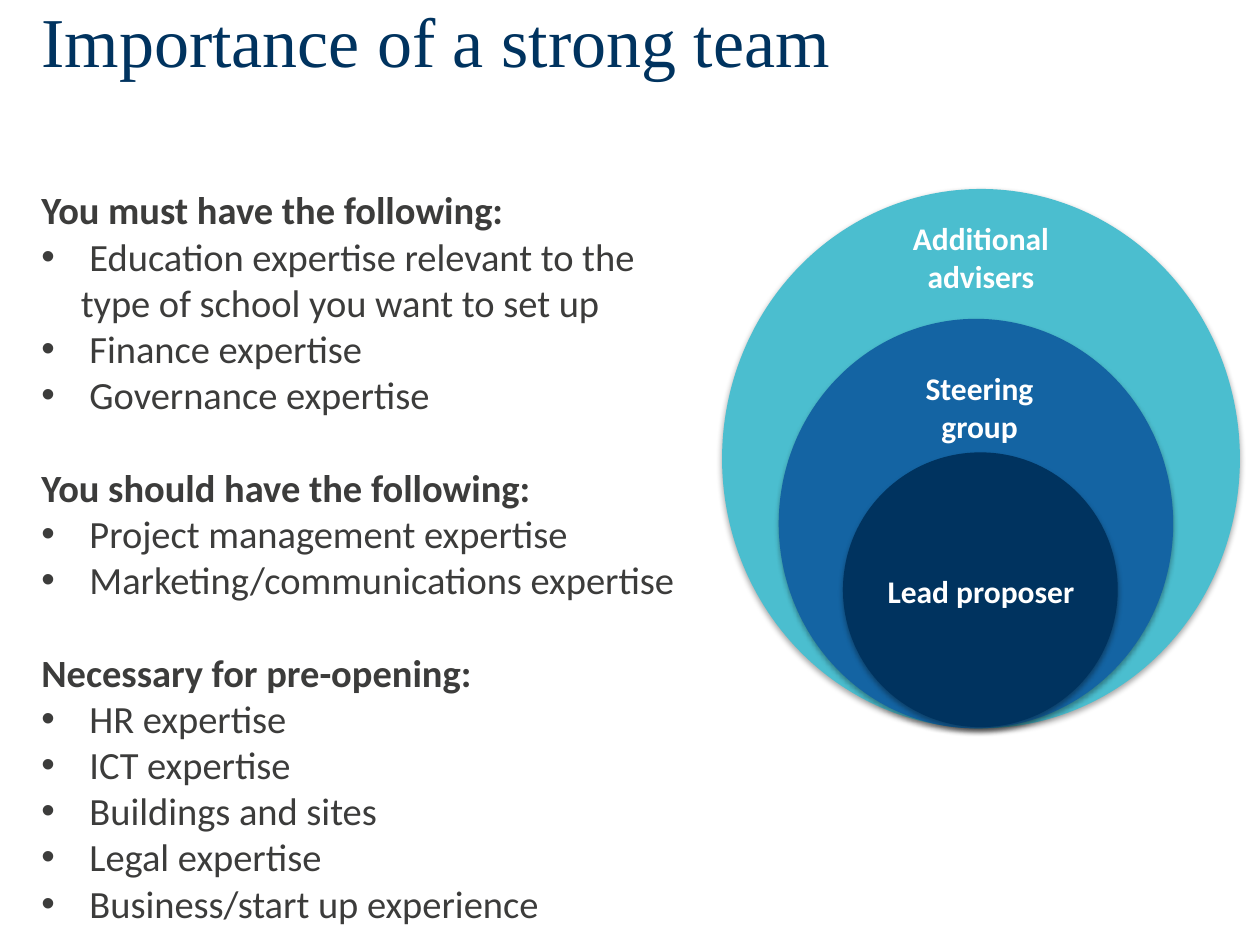
from lxml.etree import SubElement
from pptx import Presentation
from pptx.dml.color import RGBColor
from pptx.enum.shapes import MSO_SHAPE as SHAPE
from pptx.enum.text import PP_ALIGN as ALIGN
from pptx.oxml.ns import qn
from pptx.util import Pt

NAVY = RGBColor(0x00, 0x33, 0x5F)
BLUE = RGBColor(0x14, 0x64, 0xA3)
TEAL = RGBColor(0x4B, 0xBE, 0xCF)
GREY = RGBColor(0x3C, 0x3C, 0x3B)
WHITE = RGBColor(0xFF, 0xFF, 0xFF)

TITLE_FONT = dict(name="Times New Roman", size=Pt(40))
BODY_FONT = dict(name="Calibri", size=Pt(22))
LABEL_FONT = dict(name="Calibri", size=Pt(18), bold=True)
HANG = Pt(22.5)
SECTION_GAP = Pt(26.5)

SECTIONS = [
    ("You must have the following:", [
        "Education expertise relevant to the type of school you want to set up",
        "Finance expertise",
        "Governance expertise"]),
    ("You should have the following:", [
        "Project management expertise",
        "Marketing/communications expertise"]),
    ("Necessary for pre-opening:", [
        "HR expertise",
        "ICT expertise",
        "Buildings and sites",
        "Legal expertise",
        "Business/start up experience"]),
]

# left, top, width, height, fill
CIRCLES = [
    (412.6, 108, 295.9, 308.2, TEAL),
    (445, 182.2, 225.4, 234, BLUE),
    (481.7, 258.5, 157, 157, NAVY),
]

# text, left, top, height
LABELS = [
    ("Lead proposer", 499, 323.3, 29),
    ("Additional advisers", 499, 121.7, 51),
    ("Steering group", 498.2, 207.4, 51),
]
LABEL_WIDTH = 123.1


def add_box(shapes, left, top, width, height):
    tf = shapes.add_textbox(Pt(left), Pt(top), Pt(width), Pt(height)).text_frame
    tf.word_wrap = True
    return tf


def write(p, text, color, font):
    r = p.add_run()
    r.text = text
    r.font.color.rgb = color
    for name, value in font.items():
        setattr(r.font, name, value)


def set_bullet(p):
    pPr = p._p.get_or_add_pPr()
    pPr.set("marL", str(HANG))
    pPr.set("indent", str(-HANG))
    SubElement(pPr, qn("a:buFont"), typeface="Arial")
    SubElement(pPr, qn("a:buChar"), char="•")


def add_title(shapes, text):
    p = add_box(shapes, 16.6, 0.7, 680.4, 64.8).paragraphs[0]
    p.line_spacing = 0.9
    write(p, text, NAVY, TITLE_FONT)


def add_sections(shapes):
    tf = add_box(shapes, 16.6, 103, 378.7, 433.4)
    for i, (heading, items) in enumerate(SECTIONS):
        p = tf.add_paragraph() if i else tf.paragraphs[0]
        if i:
            p.space_before = SECTION_GAP
        write(p, heading, GREY, dict(BODY_FONT, bold=True))
        for item in items:
            p = tf.add_paragraph()
            set_bullet(p)
            write(p, " " + item, GREY, BODY_FONT)


def add_shadow(s):
    """Give the shape a soft shadow just below it."""
    s.shadow.inherit = False
    effects = s._element.spPr.find(qn("a:effectLst"))
    shadow = SubElement(effects, qn("a:outerShdw"), blurRad=str(Pt(3.1)),
                        dist=str(Pt(1.8)), dir="5400000", rotWithShape="0")
    color = SubElement(shadow, qn("a:srgbClr"), val="000000")
    SubElement(color, qn("a:alpha"), val="35000")


def add_circle(shapes, left, top, width, height, fill):
    s = shapes.add_shape(SHAPE.OVAL, Pt(left), Pt(top), Pt(width), Pt(height))
    s.fill.solid()
    s.fill.fore_color.rgb = fill
    s.line.fill.background()
    add_shadow(s)


def add_label(shapes, text, left, top, height):
    p = add_box(shapes, left, top, LABEL_WIDTH, height).paragraphs[0]
    p.alignment = ALIGN.CENTER
    write(p, text, WHITE, LABEL_FONT)


def main():
    prs = Presentation()
    prs.slide_width, prs.slide_height = Pt(720), Pt(540)
    shapes = prs.slides.add_slide(prs.slide_layouts[6]).shapes
    add_title(shapes, "Importance of a strong team")
    add_sections(shapes)
    team = shapes.add_group_shape().shapes
    for circle in CIRCLES:
        add_circle(team, *circle)
    for label in LABELS:
        add_label(team, *label)
    prs.save("out.pptx")


if __name__ == "__main__":
    main()
